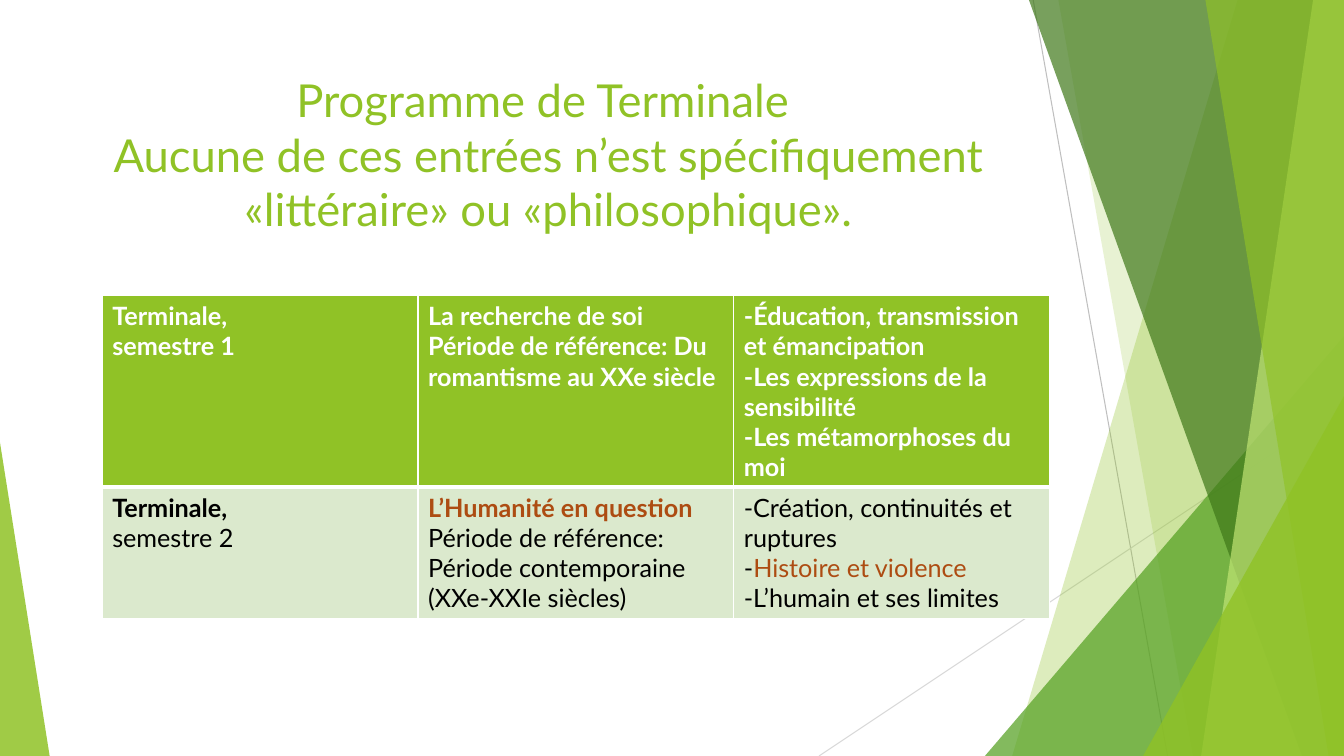
from lxml import etree
from pptx import Presentation
from pptx.dml import color as dml
from pptx.enum import shapes, text
from pptx.oxml import ns
from pptx.util import Pt

WIDE, HIGH = 960, 540
LIME, PALE, RUST = "90C226", "DBE9CD", "AD4C12"
WHITE, BLACK = "FFFFFF", "000000"

HEAD = [
    [["Terminale,"], ["semestre 1"]],
    [["La recherche de soi"],
     ["Période de référence: Du romantisme au XXe siècle"]],
    [["-Éducation, transmission et émancipation"],
     ["-Les expressions de la sensibilité"],
     ["-Les métamorphoses du moi"]],
]
BODY = [
    [[("Terminale,", {"bold": True})], ["semestre 2"]],
    [[("L’Humanité en question", {"bold": True, "color": RUST})],
     ["Période de référence: Période contemporaine (XXe-XXIe siècles)"]],
    [["-Création, continuités et ruptures"],
     ["-", ("Histoire et violence", {"color": RUST})],
     ["-L’humain et ses limites"]],
]


def tint(code):
    """Return the colour for a hex string."""
    return dml.RGBColor.from_string(code)


def put(par, words, size=18, color=BLACK, bold=False, font="Lato"):
    """Add a formatted run to a paragraph."""
    run = par.add_run()
    run.text = words
    run.font.name, run.font.size, run.font.bold = font, Pt(size), bold
    run.font.color.rgb = tint(color)


def paint(shape, code, alpha):
    """Fill a shape with a see-through colour, without line or shadow."""
    shape.shadow.inherit = False
    shape.line.fill.background()
    shape.fill.solid()
    shape.fill.fore_color.rgb = tint(code)
    clr = shape.element.spPr.find(".//" + ns.qn("a:srgbClr"))
    etree.SubElement(clr, ns.qn("a:alpha"), val=str(alpha * 1000))


def rule(slide, ends, code):
    """Draw a thin straight line between two points."""
    line = slide.shapes.add_connector(
        shapes.MSO_CONNECTOR.STRAIGHT, *[Pt(n) for n in ends])
    line.line.color.rgb = tint(code)
    line.line.width = Pt(0.75)
    etree.SubElement(line.element.spPr, ns.qn("a:effectLst"))


def facet(slide, top, base, code, alpha):
    """Draw a full-height panel from a slanted edge to the right side."""
    form = slide.shapes.build_freeform(top, 0, scale=Pt(1))
    form.add_line_segments([(WIDE, 0), (WIDE, HIGH), (base, HIGH)])
    paint(form.convert_to_shape(), code, alpha)


def wedge(slide, left, top, width, apex, code, alpha):
    """Draw a triangle that stands on the bottom edge."""
    tri = slide.shapes.add_shape(
        shapes.MSO_SHAPE.ISOSCELES_TRIANGLE,
        Pt(left), Pt(top), Pt(width), Pt(HIGH - top))
    tri.adjustments[0] = apex
    paint(tri, code, alpha)


def decor(slide):
    """Draw the green panels and fine lines at the sides."""
    rule(slide, (738, 0, 834, HIGH), "BFBFBF")
    rule(slide, (WIDE, 290, 585, HIGH), "D9D9D9")
    facet(slide, 884, 723, LIME, 30)
    facet(slide, 756, 852, LIME, 20)
    wedge(slide, 703.5, 240, 256.5, 1, "54A021", 72)
    facet(slide, 735, 929.5, "3F7819", 70)
    facet(slide, 938, 858, "C0E474", 70)
    facet(slide, 861, 949, LIME, 65)
    wedge(slide, 816.5, 283, 143.5, 1, LIME, 80)
    wedge(slide, 0, 316, 35.5, 0, LIME, 85)


def title(slide, left, top, width, height):
    """Fill the title placeholder and bring it to the front."""
    box = slide.shapes.title
    box.left, box.top, box.width, box.height = map(
        Pt, (left, top, width, height))
    frame = box.text_frame
    frame.word_wrap = True
    frame.auto_size = text.MSO_AUTO_SIZE.NONE
    frame.vertical_anchor = text.MSO_ANCHOR.TOP
    par = frame.paragraphs[0]
    par.alignment = text.PP_ALIGN.CENTER
    put(par, "Programme de Terminale ", size=32.4, color=LIME)
    par.add_line_break()
    put(par, "Aucune de ces entrées n’est spécifiquement "
        "«littéraire» ou «philosophique».", size=32.4, color=LIME)
    box.element.getparent().append(box.element)


def border(cell, **sides):
    """Give a cell white borders of the given widths."""
    props = cell._tc.get_or_add_tcPr()
    for side in "LRTB":
        line = etree.SubElement(props, ns.qn("a:ln" + side),
                                w=str(Pt(sides.get(side, 1))))
        fill = etree.SubElement(line, ns.qn("a:solidFill"))
        etree.SubElement(fill, ns.qn("a:srgbClr"), val=WHITE)


def fill(cell, pars, back, **base):
    """Set the background and the paragraphs of a cell."""
    cell.fill.solid()
    cell.fill.fore_color.rgb = tint(back)
    frame = cell.text_frame
    for i, runs in enumerate(pars):
        par = frame.add_paragraph() if i else frame.paragraphs[0]
        for run in runs:
            words, extra = (run, {}) if isinstance(run, str) else run
            put(par, words, **{**base, **extra})


def table(slide, left, top, width, heights):
    """Build the table of the two terms."""
    grid = slide.shapes.add_table(
        2, 3, Pt(left), Pt(top), Pt(width), Pt(sum(heights))).table
    grid.horz_banding = False
    for row, high in zip(grid.rows, heights):
        row.height = Pt(high)
    for col in range(3):
        head, body = grid.cell(0, col), grid.cell(1, col)
        border(head, B=3)
        border(body, T=3)
        fill(head, HEAD[col], LIME, color=WHITE, bold=True)
        fill(body, BODY[col], PALE)


def main():
    """Build and save the slide."""
    deck = Presentation()
    deck.slide_width, deck.slide_height = Pt(WIDE), Pt(HIGH)
    slide = deck.slides.add_slide(deck.slide_layouts[5])
    decor(slide)
    title(slide, 53.3, 48.2, 676.8, 140.4)
    table(slide, 73, 211.2, 676.8, (136.8, 93.6))
    deck.save("out.pptx")


if __name__ == "__main__":
    main()
